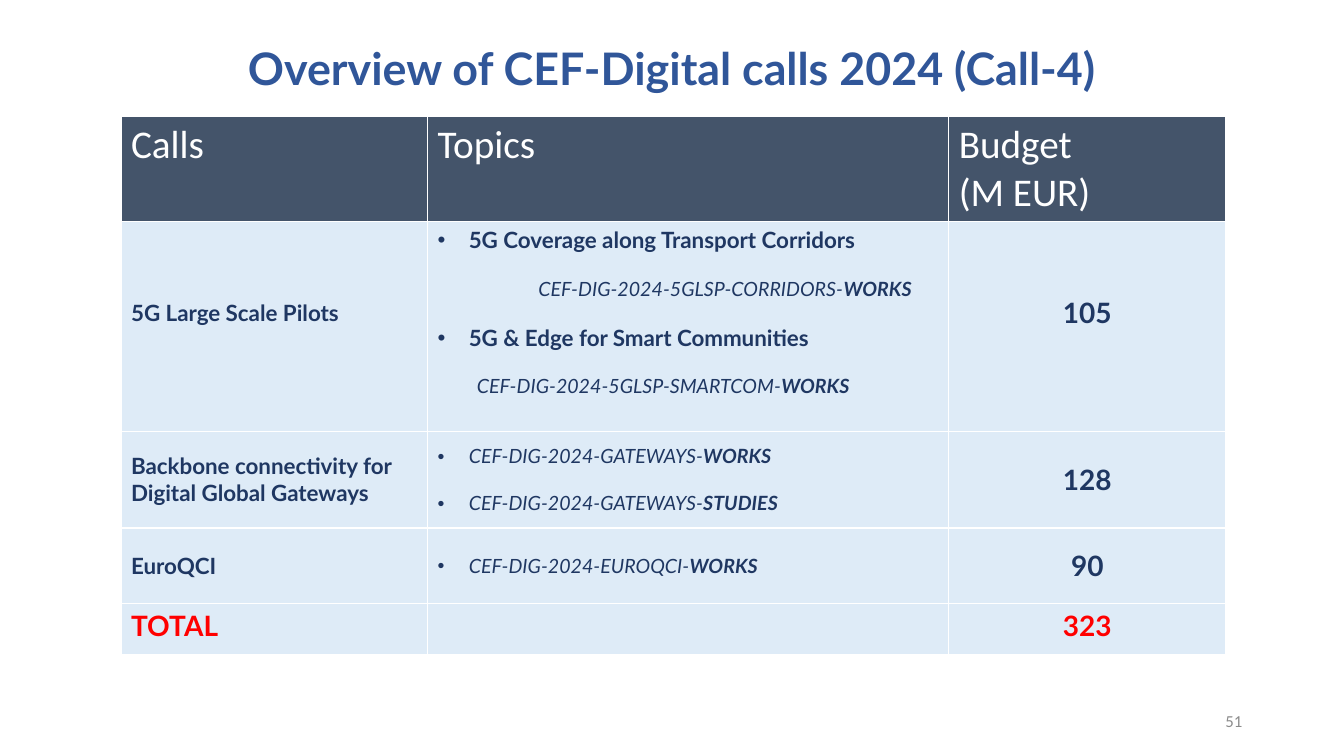
from dataclasses import dataclass

from lxml import etree
from pptx import Presentation
from pptx.dml.color import RGBColor
from pptx.enum.text import MSO_ANCHOR, PP_ALIGN
from pptx.oxml.ns import qn
from pptx.util import Inches, Pt

LEFT, CENTER, RIGHT = PP_ALIGN.LEFT, PP_ALIGN.CENTER, PP_ALIGN.RIGHT
TOP, MIDDLE = MSO_ANCHOR.TOP, MSO_ANCHOR.MIDDLE


@dataclass(frozen=True)
class Theme:
    title: str = "305699"
    head: str = "44546A"
    row: str = "DEEBF7"
    ink: str = "1F3762"
    white: str = "FFFFFF"
    total: str = "FF0000"
    gray: str = "8C8C8C"
    main: str = "Lato"
    plain: str = "Calibri"
    title_size: int = 32
    head_size: int = 28
    sum_size: int = 20
    call_size: int = 16
    code_size: int = 14
    page_size: int = 12
    gap: float = 16.8


# Each topic: lead text, bold ending, left margin in inches, bulleted
CALLS = [
    ("5G Large Scale Pilots", [
        ("5G Coverage along Transport Corridors", "", 0.31, True),
        ("CEF-DIG-2024-5GLSP-CORRIDORS-", "WORKS", 1.0, False),
        ("5G & Edge for Smart Communities", "", 0.31, True),
        ("CEF-DIG-2024-5GLSP-SMARTCOM-", "WORKS", 0.39, False),
    ], "105"),
    ("Backbone connectivity for\vDigital Global Gateways", [
        ("CEF-DIG-2024-GATEWAYS-", "WORKS", 0.31, True),
        ("CEF-DIG-2024-GATEWAYS-", "STUDIES", 0.31, True),
    ], "128"),
    ("EuroQCI", [("CEF-DIG-2024-EUROQCI-", "WORKS", 0.31, True)], "90"),
]
HEADS = ["Calls", "Topics", "Budget\v(M EUR)"]
WIDTHS = [3.04, 5.17, 2.75]
HEIGHTS = [1.04, 2.07, 0.96, 0.75, 0.51]


class Deck:
    def __init__(self, theme):
        self.theme = theme
        self.show = Presentation()
        self.show.slide_width = Inches(13.33)
        self.show.slide_height = Inches(7.5)
        self.slide = self.show.slides.add_slide(self.show.slide_layouts[5])

    def font(self, para, size, color, face=None, bold=False, align=LEFT):
        para.alignment = align
        font = para.font
        font.name = face or self.theme.main
        font.size = Pt(size)
        font.bold = bold
        font.color.rgb = RGBColor.from_string(color)

    def title(self, text):
        box = self.slide.shapes.title
        box.left, box.top = Inches(2.13), Inches(0.25)
        box.width, box.height = Inches(9.07), Inches(0.9)
        box.text_frame.vertical_anchor = MIDDLE
        para = box.text_frame.paragraphs[0]
        para.text = text
        para.line_spacing = 0.9
        self.font(para, self.theme.title_size, self.theme.title, bold=True, align=CENTER)

    def page(self, text):
        box = self.slide.shapes.add_textbox(
            Inches(9.42), Inches(6.95), Inches(3), Inches(0.4))
        box.text_frame.word_wrap = True
        box.text_frame.vertical_anchor = MIDDLE
        para = box.text_frame.paragraphs[0]
        para.text = text
        self.font(para, self.theme.page_size, self.theme.gray, self.theme.plain, align=RIGHT)

    def grid(self):
        table = self.slide.shapes.add_table(
            len(HEIGHTS), len(WIDTHS), Inches(1.2), Inches(1.15),
            Inches(sum(WIDTHS)), Inches(sum(HEIGHTS))).table
        table.horz_banding = False
        for col, width in zip(table.columns, WIDTHS):
            col.width = Inches(width)
        for index, (row, height) in enumerate(zip(table.rows, HEIGHTS)):
            row.height = Inches(height)
            for cell in row.cells:
                cell.fill.solid()
                cell.fill.fore_color.rgb = RGBColor.from_string(
                    self.theme.row if index else self.theme.head)
        return table

    def cell(self, cell, text, size, color, face=None, bold=True, align=LEFT, anchor=MIDDLE):
        cell.vertical_anchor = anchor
        para = cell.text_frame.paragraphs[0]
        para.text = text
        self.font(para, size, color, face, bold, align)

    def topics(self, cell, items):
        cell.vertical_anchor = MIDDLE
        frame = cell.text_frame
        for index, (lead, end, margin, dot) in enumerate(items):
            para = frame.add_paragraph() if index else frame.paragraphs[0]
            if index:
                para.space_before = Pt(self.theme.gap)
            props = para._p.get_or_add_pPr()
            props.set("marL", str(Inches(margin)))
            if dot:
                props.set("indent", str(-Inches(margin)))
                etree.SubElement(props, qn("a:buFont"), typeface="Arial")
                etree.SubElement(props, qn("a:buChar"), char="•")
            size = self.theme.code_size if end else self.theme.call_size
            self.font(para, size, self.theme.ink, bold=not end)
            para.font.italic = bool(end)
            para.add_run().text = lead
            if end:
                run = para.add_run()
                run.text = end
                run.font.bold = True


def main():
    theme = Theme()
    deck = Deck(theme)
    deck.title("Overview of CEF-Digital calls 2024 (Call-4)")
    table = deck.grid()
    for col, head in enumerate(HEADS):
        deck.cell(table.cell(0, col), head, theme.head_size, theme.white,
                  theme.plain, bold=False, anchor=TOP)
    for row, (call, topics, budget) in enumerate(CALLS, 1):
        deck.cell(table.cell(row, 0), call, theme.call_size, theme.ink)
        deck.topics(table.cell(row, 1), topics)
        deck.cell(table.cell(row, 2), budget, theme.sum_size, theme.ink, align=CENTER)
    for cell in table.rows[1].cells:
        cell.margin_bottom = Inches(0.33)
    last = len(HEIGHTS) - 1
    for col, text, align in [(0, "TOTAL", LEFT), (2, "323", CENTER)]:
        deck.cell(table.cell(last, col), text, theme.sum_size, theme.total,
                  align=align, anchor=TOP)
    deck.page("51")
    deck.show.save("out.pptx")


if __name__ == "__main__":
    main()
